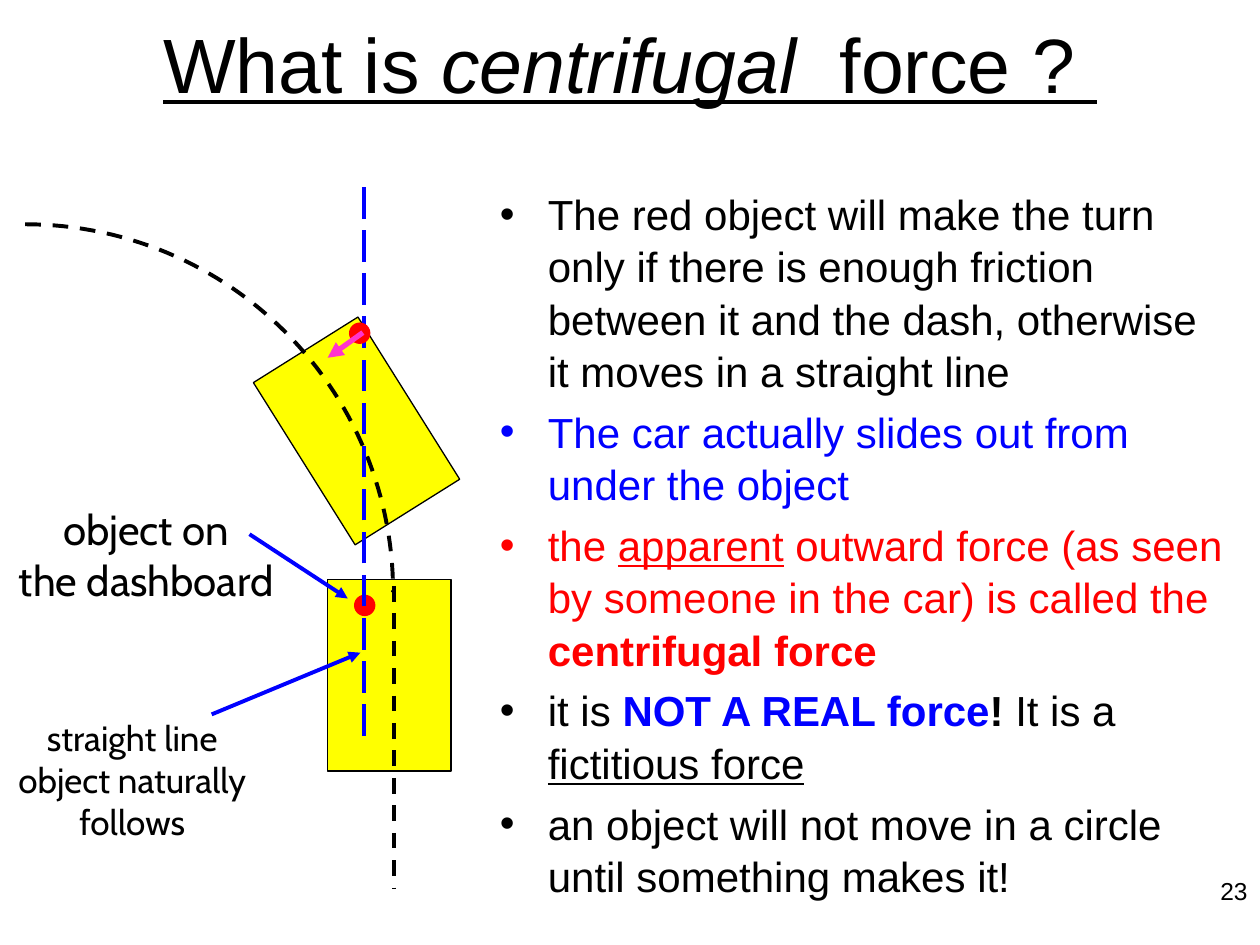
from dataclasses import dataclass, field
from math import cos, pi, sin
from typing import Any, Optional

from pptx import Presentation
from pptx.dml.color import RGBColor
from pptx.enum.dml import MSO_LINE_DASH_STYLE as Dash
from pptx.enum.shapes import MSO_CONNECTOR as Connector, MSO_SHAPE as Shape
from pptx.enum.text import MSO_ANCHOR as Anchor, MSO_AUTO_SIZE as AutoSize, PP_ALIGN as Align
from pptx.oxml.ns import qn
from pptx.util import Inches, Pt
from lxml.etree import SubElement


@dataclass(frozen=True)
class Theme:
    black: str = "000000"
    blue: str = "0000FF"
    red: str = "FF0000"
    yellow: str = "FFFF00"
    pink: str = "FF33CC"
    main_font: str = "Arial"
    label_font: str = "Cabin"
    title_size: float = 44
    body_size: float = 24
    small_label_size: float = 20
    number_size: float = 14
    outline: float = 0.75
    stroke: float = 2.25
    force_stroke: float = 3


THEME = Theme()


@dataclass(frozen=True)
class Span:
    text: str
    color: str = THEME.black
    style: dict[str, bool] = field(default_factory=dict)


@dataclass(frozen=True)
class Block:
    box: tuple[float, float, float, float]
    paragraphs: list[list[Span]]
    size: float
    font: str
    align: Align
    wrap: bool = True
    bulleted: bool = False


@dataclass(frozen=True)
class Solid:
    kind: Shape
    box: tuple[float, float, float, float]
    color: str
    rotation: float = 0
    outlined: bool = False


@dataclass(frozen=True)
class Stroke:
    start: tuple[float, float]
    end: tuple[float, float]
    color: str
    width: float = THEME.stroke
    dash: Optional[Dash] = None
    arrow: bool = False


def rgb(color: str) -> RGBColor:
    return RGBColor.from_string(color)


def inches(values: tuple[float, ...]) -> list[int]:
    return [Inches(value) for value in values]


def apply(target: Any, values: dict[str, Any]) -> None:
    for name, value in values.items():
        setattr(target, name, value)


def write_spans(paragraph: Any, spans: list[Span], size: float, font: str) -> None:
    for span in spans:
        run = paragraph.add_run()
        run.text = span.text
        apply(run.font, {"name": font, "size": Pt(size), **span.style})
        run.font.color.rgb = rgb(span.color)


def add_bullet(paragraph: Any) -> None:
    properties = paragraph._p.get_or_add_pPr()
    apply(paragraph, {"space_before": Pt(4.8), "line_spacing": 1.04})
    properties.set("marL", str(Inches(0.38)))
    properties.set("indent", str(Inches(-0.38)))
    SubElement(properties, qn("a:buFont"), typeface=THEME.main_font)
    SubElement(properties, qn("a:buChar"), char="•")


def draw_block(shapes: Any, block: Block) -> None:
    frame = shapes.add_textbox(*inches(block.box)).text_frame
    frame.word_wrap = block.wrap
    for index, spans in enumerate(block.paragraphs):
        paragraph = frame.add_paragraph() if index else frame.paragraphs[0]
        paragraph.alignment = block.align
        if block.bulleted:
            add_bullet(paragraph)
        write_spans(paragraph, spans, block.size, block.font)


def draw_solid(shapes: Any, solid: Solid) -> None:
    shape = shapes.add_shape(solid.kind, *inches(solid.box))
    shape.shadow.inherit = False
    shape.rotation = solid.rotation
    shape.fill.solid()
    shape.fill.fore_color.rgb = rgb(solid.color)
    if solid.outlined:
        shape.line.color.rgb = rgb(THEME.black)
        shape.line.width = Pt(THEME.outline)
    else:
        shape.line.fill.background()


def draw_stroke(shapes: Any, stroke: Stroke) -> None:
    line = shapes.add_connector(Connector.STRAIGHT, *inches(stroke.start + stroke.end))
    line.line.color.rgb = rgb(stroke.color)
    apply(line.line, {"width": Pt(stroke.width), "dash_style": stroke.dash})
    if stroke.arrow:
        SubElement(line.line._get_or_add_ln(), qn("a:tailEnd"), type="triangle")
    SubElement(line._element.spPr, qn("a:effectLst"))


def draw_bend(shapes: Any, center: tuple[float, float], radius: float, steps: int = 60) -> None:
    angles = [pi / 2 * step / steps for step in range(steps + 1)]
    points = [
        (Inches(center[0] + radius * sin(angle)), Inches(center[1] - radius * cos(angle)))
        for angle in angles
    ]
    builder = shapes.build_freeform(*points[0], scale=1.0)
    builder.add_line_segments(points[1:], close=False)
    bend = builder.convert_to_shape()
    bend.shadow.inherit = False
    bend.fill.background()
    bend.line.color.rgb = rgb(THEME.black)
    apply(bend.line, {"width": Pt(THEME.stroke), "dash_style": Dash.DASH})


def draw_title(title: Any) -> None:
    left, top, width, height = inches((0, 0, 10, 1))
    apply(title, {"left": left, "top": top, "width": width, "height": height})
    frame = title.text_frame
    apply(frame, {"vertical_anchor": Anchor.MIDDLE, "auto_size": AutoSize.NONE})
    frame.paragraphs[0].alignment = Align.CENTER
    spans = [
        Span("What is ", style={"underline": True}),
        Span("centrifugal", style={"underline": True, "italic": True}),
        Span("  force ? ", style={"underline": True}),
    ]
    write_spans(frame.paragraphs[0], spans, THEME.title_size, THEME.main_font)


CARS = [
    Solid(Shape.RECTANGLE, (2.34, 2.66, 0.98, 1.52), THEME.yellow, 327.9, True),
    Solid(Shape.RECTANGLE, (2.6, 4.6, 0.98, 1.52), THEME.yellow, 0, True),
]
START_OBJECT = Solid(Shape.OVAL, (2.81, 4.72, 0.17, 0.17), THEME.red)
TURNING_OBJECT = Solid(Shape.OVAL, (2.77, 2.56, 0.17, 0.17), THEME.red)
ROAD = Stroke((3.13, 4.65), (3.13, 7.05), THEME.black, dash=Dash.DASH)
NATURAL_COURSE = Stroke((2.89, 5.84), (2.89, 1.44), THEME.blue, dash=Dash.LONG_DASH)
ARROWS = [
    Stroke((1.98, 4.24), (2.76, 4.75), THEME.blue, arrow=True),
    Stroke((1.68, 5.67), (2.86, 5.18), THEME.blue, arrow=True),
    Stroke((2.88, 2.64), (2.6, 2.84), THEME.pink, THEME.force_stroke, arrow=True),
]
BOLD, UNDERLINE = {"bold": True}, {"underline": True}
EXPLANATION = [
    [Span("The red object will make the turn only if there is enough friction "
          "between it and the dash, otherwise it moves in a straight line")],
    [Span("The car actually slides out from under the object", THEME.blue)],
    [Span("the ", THEME.red), Span("apparent", THEME.red, UNDERLINE),
     Span(" outward force (as seen by someone in the car) is called the ", THEME.red),
     Span("centrifugal force", THEME.red, BOLD)],
    [Span("it is "), Span("NOT A REAL force", THEME.blue, BOLD), Span("! ", style=BOLD),
     Span("It is a "), Span("fictitious force", style=UNDERLINE)],
    [Span("an object will not move in a circle until something makes it!")],
]
BLOCKS = [
    Block((3.87, 1.43, 5.96, 5.72), EXPLANATION, THEME.body_size, THEME.main_font,
          Align.LEFT, bulleted=True),
    Block((0, 3.95, 2.32, 0.9), [[Span("object on")], [Span("the dashboard")]],
          THEME.body_size, THEME.label_font, Align.CENTER, wrap=False),
    Block((0, 5.64, 2.1, 1.1),
          [[Span("straight line")], [Span("object naturally")], [Span("follows")]],
          THEME.small_label_size, THEME.label_font, Align.CENTER, wrap=False),
    Block((9.43, 6.9, 0.57, 0.52), [[Span("23")]], THEME.number_size,
          THEME.main_font, Align.RIGHT),
]


def main() -> None:
    deck = Presentation()
    deck.slide_width, deck.slide_height = inches((10, 7.5))
    shapes = deck.slides.add_slide(deck.slide_layouts[5]).shapes
    draw_title(shapes.title)
    for car in CARS:
        draw_solid(shapes, car)
    draw_bend(shapes, (0.2, 4.7), 2.92)
    draw_stroke(shapes, ROAD)
    draw_solid(shapes, START_OBJECT)
    draw_stroke(shapes, NATURAL_COURSE)
    draw_solid(shapes, TURNING_OBJECT)
    for arrow in ARROWS:
        draw_stroke(shapes, arrow)
    for block in BLOCKS:
        draw_block(shapes, block)
    deck.save("out.pptx")


if __name__ == "__main__":
    main()
